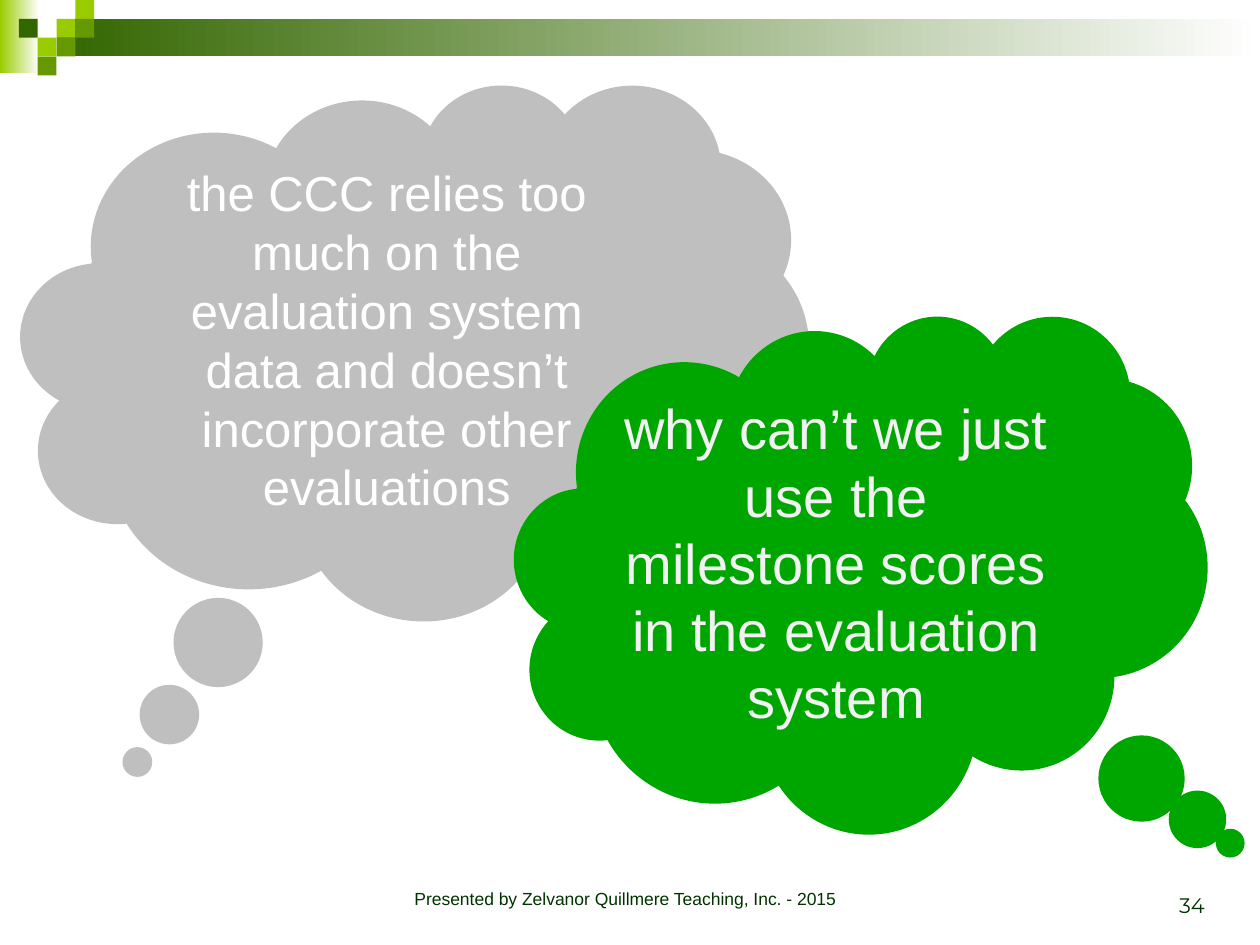
"""Build a slide with two overlapping thought clouds under a green banner."""
from dataclasses import dataclass

import pptx
import pptx.dml.color
import pptx.enum.shapes
import pptx.enum.text
import pptx.util

Cm = pptx.util.Cm
Shape = pptx.enum.shapes.MSO_SHAPE
Align = pptx.enum.text.PP_ALIGN
Anchor = pptx.enum.text.MSO_ANCHOR


@dataclass(frozen=True)
class Theme:
    lime: str = "99CC00"
    leaf: str = "669900"
    forest: str = "336600"
    gray: str = "BFBFBF"
    green: str = "00A600"
    white: str = "FFFFFF"
    pale: str = "F2F2F2"
    ink: str = "003300"
    font: str = "Arial"
    number_font: str = "Montserrat"
    gray_size: int = 28
    green_size: int = 32
    footer_size: int = 10
    number_size: int = 12


THEME = Theme()


def rgb(value):
    return pptx.dml.color.RGBColor.from_string(value)


def write(sp, text, size, color, font=THEME.font, align=Align.CENTER, anchor=Anchor.MIDDLE):
    tf = sp.text_frame
    tf.word_wrap = True
    tf.vertical_anchor = anchor
    p = tf.paragraphs[0]
    p.alignment = align
    r = p.add_run()
    r.text = text
    r.font.name = font
    r.font.size = pptx.util.Pt(size)
    r.font.color.rgb = rgb(color)


def add_shape(s, kind, box, color, fade_to=None):
    sp = s.shapes.add_shape(kind, *map(Cm, box))
    sp.shadow.inherit = False
    sp.line.fill.background()
    if fade_to:
        sp.fill.gradient()
        sp.fill.gradient_angle = 0
        for stop, value in zip(sp.fill.gradient_stops, (color, fade_to)):
            stop.color.rgb = rgb(value)
    else:
        sp.fill.solid()
        sp.fill.fore_color.rgb = rgb(color)
    return sp


def add_banner(s, cell=0.38):
    add_shape(s, Shape.RECTANGLE, (0, 0, 0.79, 1.47), THEME.lime, THEME.white)
    add_shape(s, Shape.RECTANGLE, (1.14, 0.38, 24.26, 0.76), THEME.forest, THEME.white)
    tiles = {
        THEME.lime: [(3, 1), (4, 0), (2, 2)],
        THEME.leaf: [(4, 1), (3, 2), (2, 3)],
        THEME.forest: [(1, 1)],
    }
    for color, places in tiles.items():
        for col, row in places:
            add_shape(s, Shape.RECTANGLE, (col * cell, row * cell, cell, cell), color)


def add_cloud(s, box, tail, fill, text, **style):
    sp = add_shape(s, Shape.CLOUD_CALLOUT, box, fill)
    for i, value in enumerate(tail):
        sp.adjustments[i] = value
    write(sp, text, **style)


def add_text(s, box, text, **style):
    write(s.shapes.add_textbox(*map(Cm, box)), text, **style)


def main():
    prs = pptx.Presentation()
    prs.slide_width, prs.slide_height = Cm(25.4), Cm(19.05)
    s = prs.slides.add_slide(prs.slide_layouts[6])
    add_banner(s)
    add_cloud(s, (0.42, 1.69, 15.88, 10.8), (-0.352, 0.766), THEME.gray,
              "the CCC relies too much on the evaluation system data and "
              "doesn’t incorporate other evaluations",
              size=THEME.gray_size, color=THEME.white)
    add_cloud(s, (10.37, 6.35, 13.97, 10.44), (0.533, 0.52), THEME.green,
              "why can’t we just use the milestone scores in the evaluation system",
              size=THEME.green_size, color=THEME.pale)
    add_text(s, (6.99, 17.78, 11.22, 0.84),
             "Presented by Zelvanor Quillmere Teaching, Inc. - 2015",
             size=THEME.footer_size, color=THEME.ink, anchor=Anchor.TOP)
    add_text(s, (18.62, 17.35, 5.92, 1.27), "34", size=THEME.number_size, color=THEME.ink,
             font=THEME.number_font, align=Align.RIGHT, anchor=Anchor.BOTTOM)
    prs.save("out.pptx")


if __name__ == "__main__":
    main()
